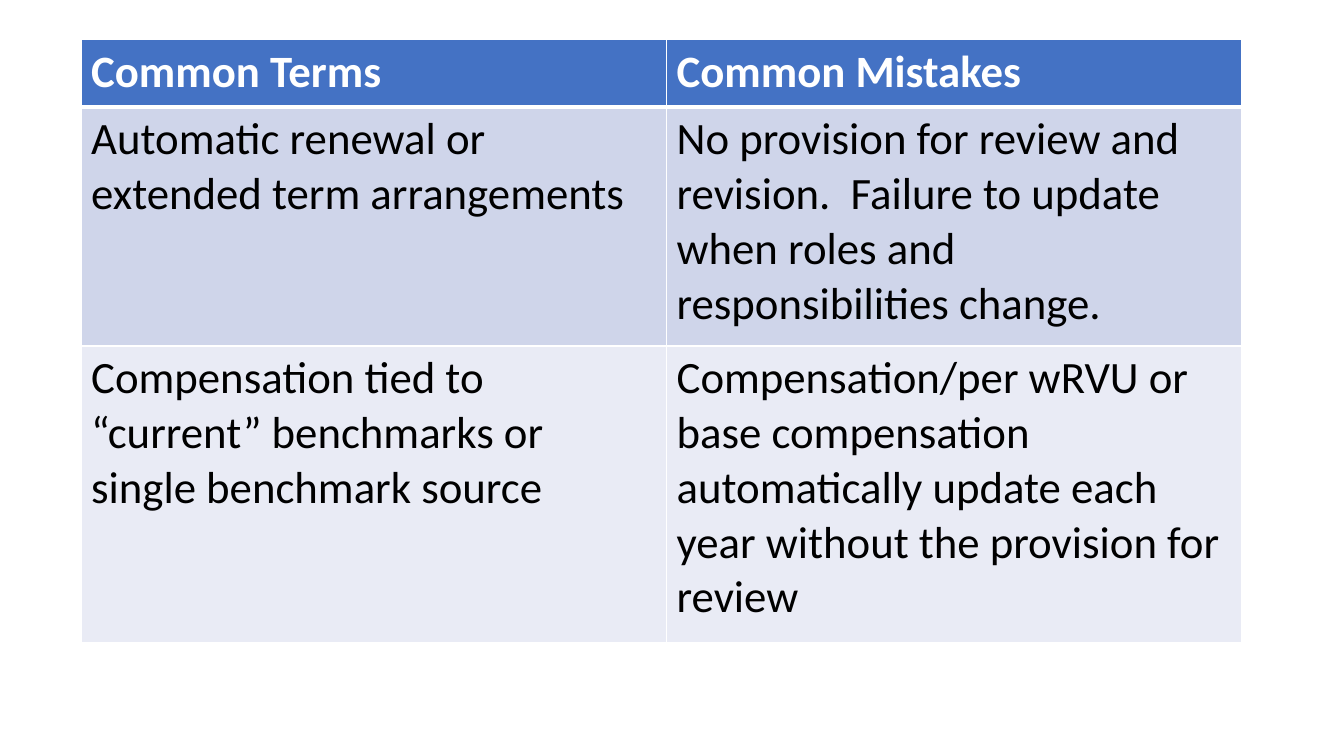
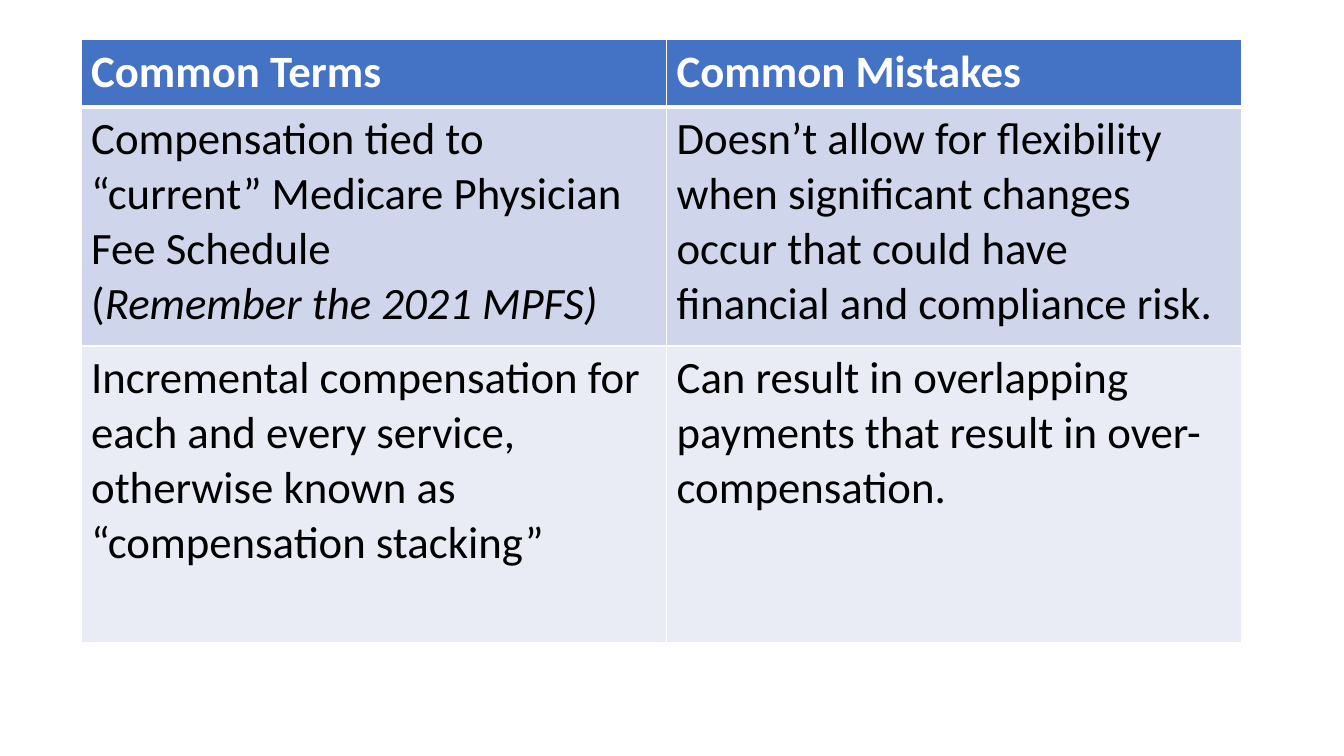
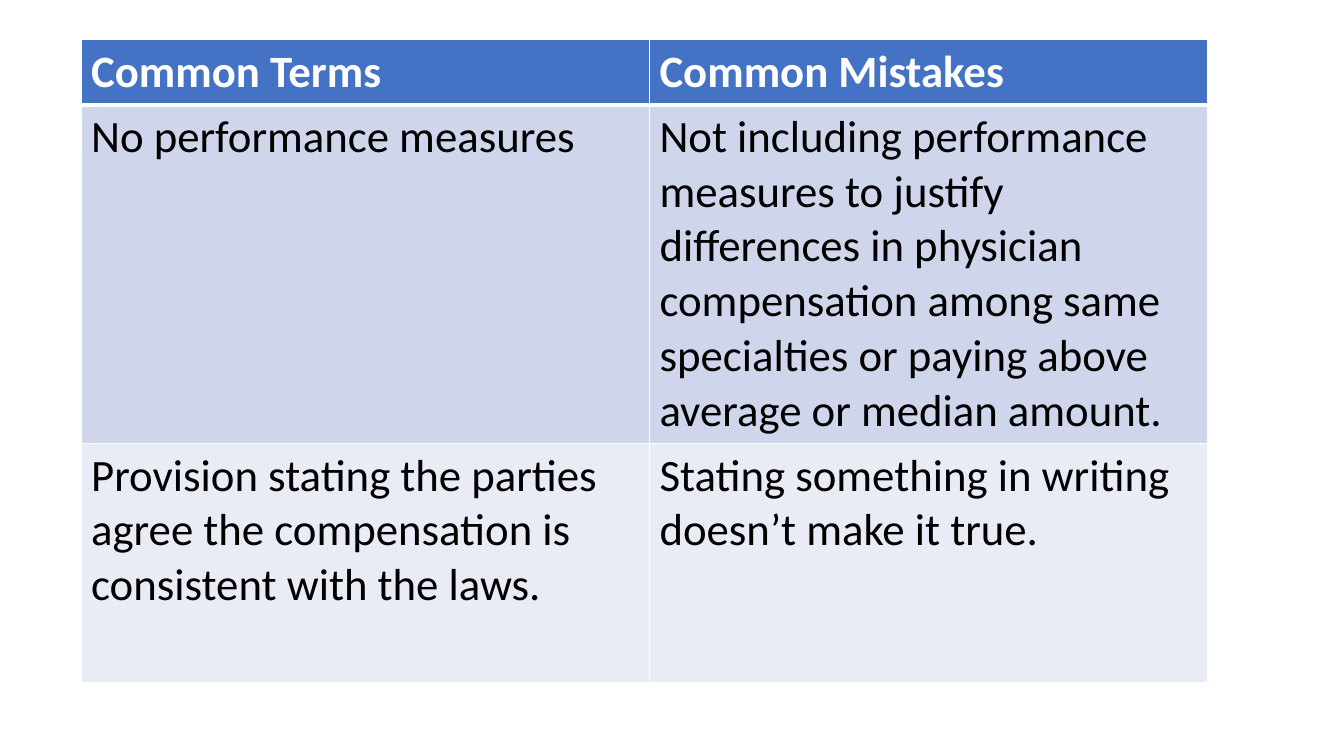
from lxml.etree import SubElement
from pptx import Presentation
from pptx.dml.color import RGBColor
from pptx.oxml.ns import qn
from pptx.util import Pt

FONT = "Calibri"
TEXT_SIZE = 32
WHITE, BLACK = "FFFFFF", "000000"
ROW_FILLS = ["4472C4", "CFD5EA", "E9EBF5"]
HEADER = ("Common Terms", "Common Mistakes")
TABLE_LEFT, TABLE_TOP = 57.9, 28.4
ITALIC_MARK = "_"

STANDARD_LAYOUT = ([418.2, 410.4], [48.2, 170.6, 211.7])
TALL_LAYOUT = ([406, 398.6], [46.3, 241.6, 170.6])

TABLES = [
    (STANDARD_LAYOUT, [
        ("Automatic renewal or extended term arrangements",
         "No provision for review and revision.  Failure to update when roles "
         "and responsibilities change."),
        ("Compensation tied to “current” benchmarks or single benchmark source",
         "Compensation/per wRVU or base compensation automatically update each "
         "year without the provision for review"),
    ]),
    (STANDARD_LAYOUT, [
        ("Compensation tied to “current” Medicare Physician Fee Schedule\n"
         "(_Remember the 2021 MPFS)",
         "Doesn’t allow for flexibility when significant changes occur that "
         "could have financial and compliance risk."),
        ("Incremental compensation for each and every service, otherwise known "
         "as “compensation stacking”",
         "Can result in overlapping payments that result in over-compensation."),
    ]),
    (TALL_LAYOUT, [
        ("No performance measures",
         "Not including performance measures to justify differences in "
         "physician compensation among same specialties or paying above "
         "average or median amount."),
        ("Provision stating the parties agree the compensation is consistent "
         "with the laws.",
         "Stating something in writing doesn’t make it true."),
    ]),
]


def color(value):
    return RGBColor.from_string(value)


def add_borders(cell, row_index):
    properties = cell._tc.get_or_add_tcPr()
    widths = {
        "a:lnL": 1,
        "a:lnR": 1,
        "a:lnT": 3 if row_index == 1 else 1,
        "a:lnB": 3 if row_index == 0 else 1,
    }
    for tag, width in widths.items():
        line = SubElement(properties, qn(tag), w=str(Pt(width)))
        fill = SubElement(line, qn("a:solidFill"))
        SubElement(fill, qn("a:srgbClr"), val=WHITE)


presentation = Presentation()
presentation.slide_width = Pt(960)
presentation.slide_height = Pt(540)
blank_layout = presentation.slide_layouts[6]

for (column_widths, row_heights), body in TABLES:
    slide = presentation.slides.add_slide(blank_layout)
    table = slide.shapes.add_table(
        len(row_heights), len(column_widths), Pt(TABLE_LEFT), Pt(TABLE_TOP),
        Pt(sum(column_widths)), Pt(sum(row_heights))).table
    for column, width in zip(table.columns, column_widths):
        column.width = Pt(width)
    for row, height in zip(table.rows, row_heights):
        row.height = Pt(height)

    for row_index, texts in enumerate([HEADER, *body]):
        is_header = row_index == 0
        for column_index, text in enumerate(texts):
            cell = table.cell(row_index, column_index)
            add_borders(cell, row_index)
            cell.fill.solid()
            cell.fill.fore_color.rgb = color(ROW_FILLS[row_index])
            cell.text_frame.text = text
            for paragraph in cell.text_frame.paragraphs:
                parts = paragraph.text.split(ITALIC_MARK)
                paragraph.clear()
                for part_index, part in enumerate(parts):
                    run = paragraph.add_run()
                    run.text = part
                    run.font.name = FONT
                    run.font.size = Pt(TEXT_SIZE)
                    run.font.bold = is_header
                    run.font.italic = part_index % 2 == 1
                    run.font.color.rgb = color(WHITE if is_header else BLACK)

presentation.save("out.pptx")
